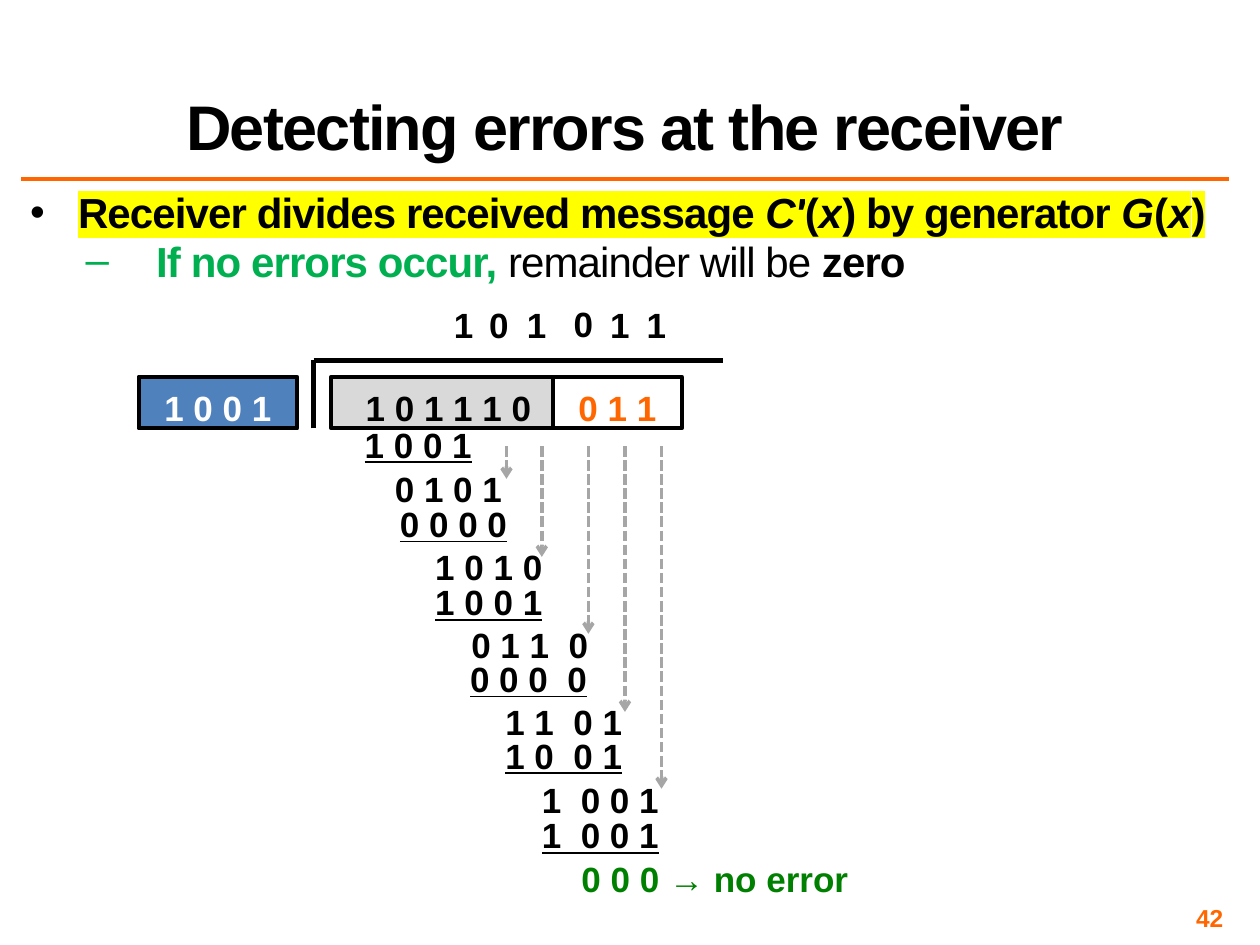
from typing import NamedTuple

import pptx
import pptx.dml.color
import pptx.enum.dml
import pptx.enum.shapes
import pptx.enum.text
import pptx.oxml.ns
import pptx.oxml.xmlchemy
import pptx.util
from lxml import etree
from pptx.util import Inches

RGBColor = pptx.dml.color.RGBColor
Align = pptx.enum.text.PP_ALIGN
Anchor = pptx.enum.text.MSO_ANCHOR

BLACK = RGBColor(0, 0, 0)
WHITE = RGBColor(255, 255, 255)
ORANGE = RGBColor(0xFF, 0x66, 0x00)
LIGHT_GRAY = RGBColor(0xD9, 0xD9, 0xD9)
ARROW_GRAY = RGBColor(0xA6, 0xA6, 0xA6)
BLUE = RGBColor(0x4F, 0x81, 0xBD)
GREEN = RGBColor(0x00, 0xB0, 0x50)
DARK_GREEN = RGBColor(0x00, 0x80, 0x00)
YELLOW = RGBColor(0xFF, 0xFF, 0x00)


class Step(NamedTuple):
    """One row of the long division."""
    left: float
    top: float
    width: float
    digits: str
    underline: bool = False


class BitBox(NamedTuple):
    """A framed group of bits."""
    left: float
    width: float
    digits: str
    fill: RGBColor
    color: RGBColor
    side_inset: float


class Bullet(NamedTuple):
    """A bulleted line; each run is (text, format)."""
    symbol: str
    indent: float
    hanging: float
    runs: list


STEPS = [
    Step(2.79, 3.31, 1.06, "1 0 0 1", True),
    Step(3.03, 3.66, 1.06, "0 1 0 1"),
    Step(3.07, 3.94, 1.06, "0 0 0 0", True),
    Step(3.35, 4.28, 1.06, "1 0 1 0"),
    Step(3.35, 4.56, 1.06, "1 0 0 1", True),
    Step(3.64, 4.90, 1.13, "0 1 1  0"),
    Step(3.63, 5.17, 1.13, "0 0 0  0", True),
    Step(3.91, 5.51, 1.13, "1 1  0 1"),
    Step(3.91, 5.78, 1.13, "1 0  0 1", True),
    Step(4.20, 6.13, 1.13, "1  0 0 1"),
    Step(4.20, 6.41, 1.13, "1  0 0 1", True),
]
BIT_BOXES = [
    BitBox(2.63, 1.86, "1 0 1 1 1 0", LIGHT_GRAY, BLACK, 0.1),
    BitBox(4.39, 1.02, "0 1 1", WHITE, ORANGE, 0.1),
    BitBox(1.10, 1.26, "1 0 0 1", BLUE, WHITE, 0),
]
QUOTIENT = [(3.5, 2.36, "1"), (3.78, 2.36, "0"), (4.08, 2.36, "1"),
            (4.45, 2.35, "0"), (4.74, 2.36, "1"), (5.03, 2.36, "1")]
# Column and lower end of each bring-down arrow
BRING_DOWNS = [(4.02, 3.8), (4.3, 4.42), (4.67, 5.03), (4.96, 5.65), (5.25, 6.26)]

MARKED = dict(size=24, bold=True, spacing=-0.5, highlight=YELLOW)
MARKED_ITALIC = dict(MARKED, italic=True)
PLAIN = dict(size=24, spacing=-0.5)
BULLETS = [
    Bullet("•", 0.38, -0.38, [
        ("Receiver divides received message ", MARKED), ("C′", MARKED_ITALIC),
        ("(", MARKED), ("x", MARKED_ITALIC), (") by generator ", MARKED),
        ("G", MARKED_ITALIC), ("(", MARKED), ("x", MARKED_ITALIC), (")", MARKED)]),
    Bullet("–", 1, -0.56, [
        ("If no errors occur, ", dict(PLAIN, bold=True, color=GREEN)),
        ("remainder will be ", PLAIN), ("zero", dict(PLAIN, bold=True))]),
]


def add_child(parent, tag: str, **attributes: str):
    return etree.SubElement(parent, pptx.oxml.ns.qn(tag), attributes)


def add_run(paragraph, text: str, *, size: float = 20, color: RGBColor = BLACK,
            bold: bool = False, italic: bool = False, underline: bool = False,
            spacing: float = 0, highlight: RGBColor | None = None) -> None:
    run = paragraph.add_run()
    run.text = text
    font = run.font
    font.name, font.size = "Arial", pptx.util.Pt(size)
    font.bold, font.italic, font.underline = bold, italic, underline
    font.color.rgb = color
    properties = run._r.get_or_add_rPr()
    if spacing:
        properties.set("spc", str(round(spacing * 100)))
    if highlight is not None:
        mark = add_child(properties, "a:highlight")
        add_child(mark, "a:srgbClr", val=str(highlight))
        properties.find(pptx.oxml.ns.qn("a:solidFill")).addnext(mark)


def set_frame(shape, anchor, insets: tuple, wrap: bool):
    frame = shape.text_frame
    frame.word_wrap = wrap
    frame.vertical_anchor = anchor
    (frame.margin_left, frame.margin_top,
     frame.margin_right, frame.margin_bottom) = map(Inches, insets)
    return frame


def add_text(slide, text: str, left: float, top: float, width: float, height: float,
             *, align=Align.CENTER, anchor=Anchor.TOP, insets: tuple = (0.1, 0.05, 0.1, 0.05),
             wrap: bool = False, line_spacing: float = 1, **font) -> None:
    box = slide.shapes.add_textbox(*map(Inches, (left, top, width, height)))
    paragraph = set_frame(box, anchor, insets, wrap).paragraphs[0]
    paragraph.alignment = align
    paragraph.line_spacing = line_spacing
    add_run(paragraph, text, bold=True, **font)


def add_bullets(slide, bullets: list[Bullet]) -> None:
    box = slide.shapes.add_textbox(Inches(0.2), Inches(1.52), Inches(9.56), Inches(1.04))
    frame = set_frame(box, Anchor.TOP, (0.04,) * 4, True)
    for level, bullet in enumerate(bullets):
        paragraph = frame.add_paragraph() if level else frame.paragraphs[0]
        paragraph.level = level
        paragraph.line_spacing = 0.8
        paragraph.space_before = pptx.util.Pt(4.8)
        properties = paragraph._p.get_or_add_pPr()
        properties.set("marL", str(Inches(bullet.indent)))
        properties.set("indent", str(Inches(bullet.hanging)))
        add_child(properties, "a:buFont", typeface="Arial")
        add_child(properties, "a:buChar", char=bullet.symbol)
        for text, font in bullet.runs:
            add_run(paragraph, text, **font)


def add_bit_box(slide, box: BitBox) -> None:
    shape = slide.shapes.add_shape(
        pptx.enum.shapes.MSO_SHAPE.RECTANGLE,
        Inches(box.left), Inches(2.99), Inches(box.width), Inches(0.41))
    shape.shadow.inherit = False
    shape.fill.solid()
    shape.fill.fore_color.rgb = box.fill
    shape.line.color.rgb = BLACK
    shape.line.width = pptx.util.Pt(2.25)
    inset = box.side_inset
    frame = set_frame(shape, Anchor.BOTTOM, (inset, inset / 2, inset, 0), True)
    frame.paragraphs[0].alignment = Align.CENTER
    add_run(frame.paragraphs[0], box.digits, color=box.color, bold=True)


def add_line(slide, start: tuple, end: tuple, color: RGBColor, width: float,
             arrow: bool = False) -> None:
    line = slide.shapes.add_connector(
        pptx.enum.shapes.MSO_CONNECTOR.STRAIGHT, *map(Inches, start + end))
    line.line.color.rgb = color
    line.line.width = pptx.util.Pt(width)
    if arrow:
        line.line.dash_style = pptx.enum.dml.MSO_LINE.SQUARE_DOT
        add_child(line.line._get_or_add_ln(), "a:tailEnd", type="arrow")
    add_child(line._element.spPr, "a:effectLst")


def main() -> None:
    presentation = pptx.Presentation()
    presentation.slide_width, presentation.slide_height = Inches(10), Inches(7.5)
    slide = presentation.slides.add_slide(presentation.slide_layouts[6])

    # Title, rule, bullets and page number
    add_line(slide, (0.17, 1.42), (9.75, 1.42), ORANGE, 2)
    add_text(slide, "Detecting errors at the receiver", 0.17, 0.17, 9.58, 1.17,
             anchor=Anchor.BOTTOM, wrap=True, line_spacing=0.8, size=36, spacing=-1)
    add_bullets(slide, BULLETS)
    add_text(slide, "42", 7.42, 7.17, 2.33, 0.23, align=Align.RIGHT, anchor=Anchor.MIDDLE,
             insets=(0.04,) * 4, wrap=True, size=14, color=ORANGE)

    # Divisor, received message and division bracket
    for box in BIT_BOXES:
        add_bit_box(slide, box)
    add_line(slide, (2.49, 3.4), (2.49, 2.86), BLACK, 3)
    add_line(slide, (2.49, 2.86), (5.74, 2.86), BLACK, 3)

    # Quotient, division steps and remainder
    for left, top, digit in QUOTIENT:
        add_text(slide, digit, left, top, 0.36, 0.44)
    for step in STEPS:
        add_text(slide, step.digits, step.left, step.top, step.width, 0.44,
                 underline=step.underline)
    for column, bottom in BRING_DOWNS:
        add_line(slide, (column, 3.54), (column, bottom), ARROW_GRAY, 2, arrow=True)
    add_text(slide, "0 0 0 → no error", 4.51, 6.76, 2.33, 0.44, color=DARK_GREEN)

    presentation.save("out.pptx")


if __name__ == "__main__":
    main()
